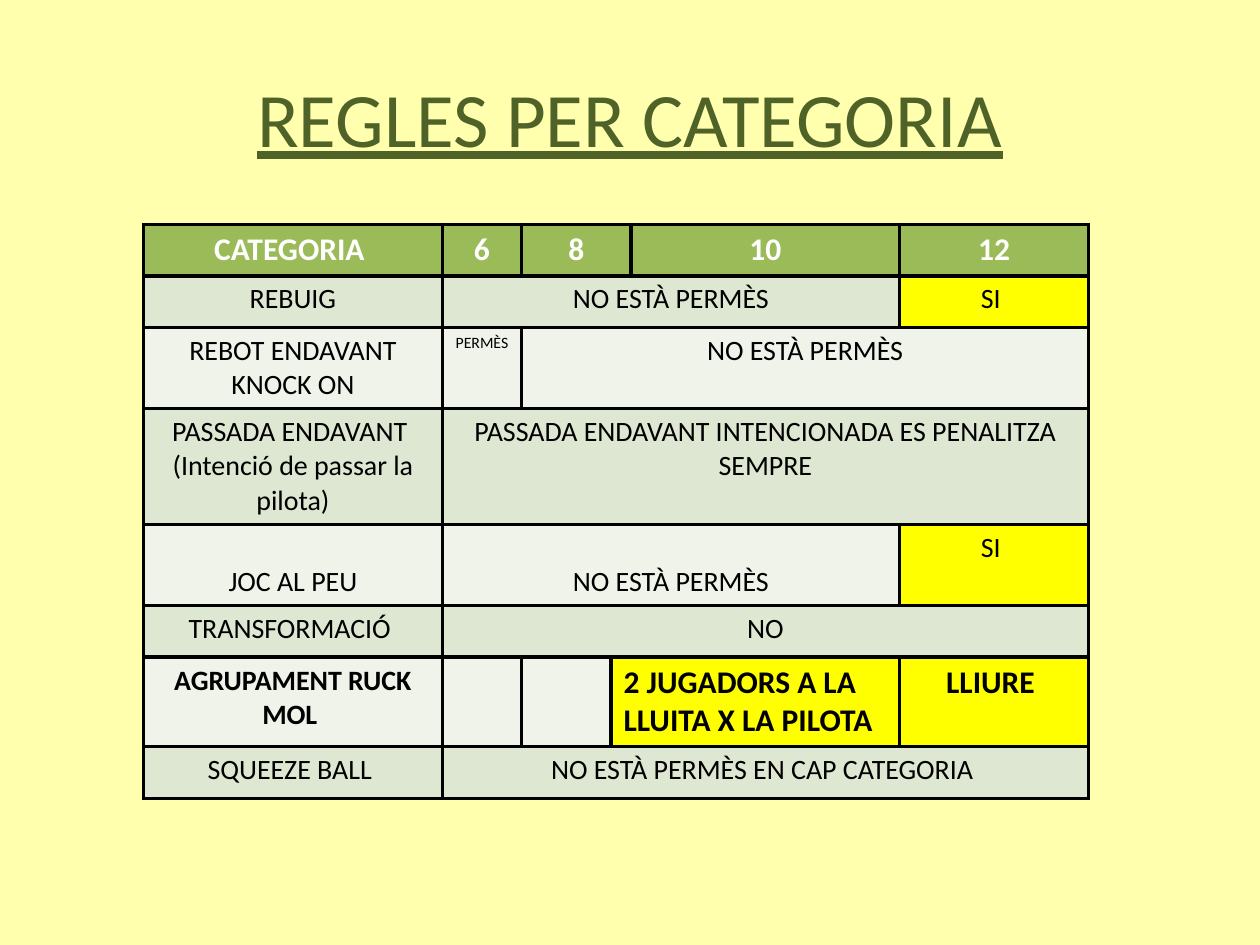
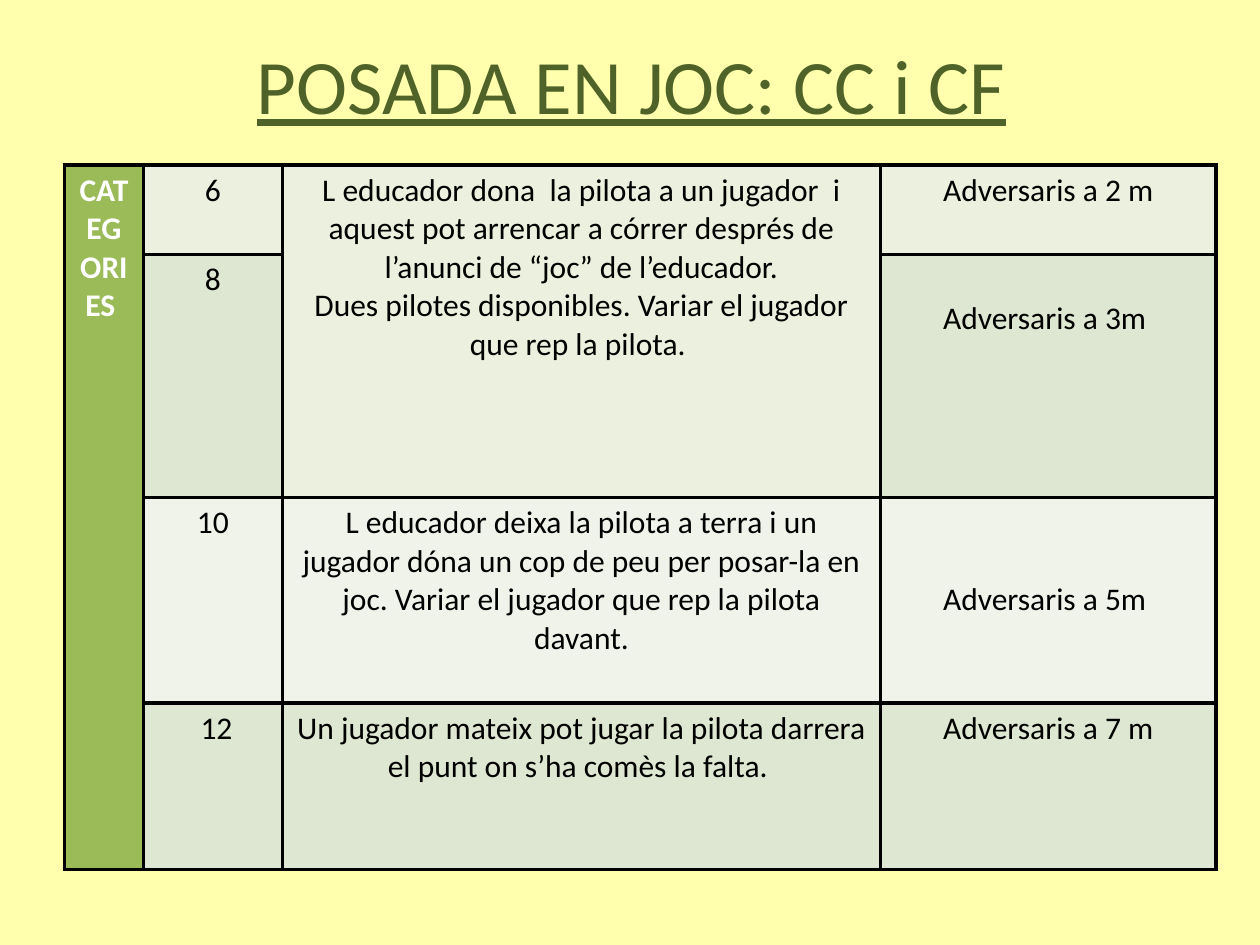
from dataclasses import dataclass

from lxml import etree
from pptx import Presentation
from pptx.dml.color import RGBColor
from pptx.enum import text as t
from pptx.oxml import ns
from pptx.util import Inches, Pt


@dataclass(frozen=True)
class Theme:
    font: str = "Calibri"
    background: str = "FFFFAD"
    title: str = "4F6228"
    header: str = "9BBB59"
    header_text: str = "FFFFFF"
    text: str = "000000"
    bands: tuple = ("EFF3EA", "DEE7D1")
    first_band: str = "EBF1DE"
    highlight: str = "FFFF00"
    border: str = "000000"
    border_width: float = 2.25
    title_size: int = 44
    large: int = 18
    normal: int = 16
    tiny: int = 9
    line_height: float = 1.22
    cell_margin: float = 0.05


THEME = Theme()


@dataclass
class Cell:
    text: str = ""
    columns: int = 1
    rows: int = 1
    fill: str = None
    size: int = None
    color: str = THEME.text
    bold: bool = False
    align: int = t.PP_ALIGN.CENTER
    lines_above: int = 0
    vertical: bool = False


def header(text, **options):
    return Cell(text, fill=THEME.header, color=THEME.header_text,
                bold=True, size=THEME.large, **options)


def highlight(text, **options):
    return Cell(text, fill=THEME.highlight, **options)


# Text and titles
def write_text(frame, content, *, size, color, bold=False, underline=False,
               align=t.PP_ALIGN.CENTER):
    """Write one paragraph for each line of the content."""
    for index, line in enumerate(content.split("\n")):
        paragraph = frame.add_paragraph() if index else frame.paragraphs[0]
        paragraph.alignment = align
        run = paragraph.add_run()
        run.text = line
        run.font.name = THEME.font
        run.font.size = Pt(size)
        run.font.bold = bold
        run.font.underline = underline
        run.font.color.rgb = RGBColor.from_string(color)


def add_titled_slide(presentation, title, left, top):
    slide = presentation.slides.add_slide(presentation.slide_layouts[5])
    shape = slide.shapes.title
    shape.left, shape.top = Inches(left), Inches(top)
    shape.width, shape.height = Inches(9), Inches(1.25)
    shape.text_frame.vertical_anchor = t.MSO_ANCHOR.MIDDLE
    write_text(shape.text_frame, title, size=THEME.title_size,
               color=THEME.title, underline=True)
    return slide


# Tables
def set_borders(cell):
    properties = cell._tc.get_or_add_tcPr()
    for side in ("lnL", "lnR", "lnT", "lnB"):
        line = etree.SubElement(properties, ns.qn(f"a:{side}"),
                                w=str(Pt(THEME.border_width)))
        fill = etree.SubElement(line, ns.qn("a:solidFill"))
        etree.SubElement(fill, ns.qn("a:srgbClr"), val=THEME.border)


def set_fill(cell, color):
    cell.fill.solid()
    cell.fill.fore_color.rgb = RGBColor.from_string(color)


def fill_cell(cell, content, size):
    size = content.size or size
    if content.fill:
        set_fill(cell, content.fill)
    if content.lines_above:
        offset = content.lines_above * size * THEME.line_height / 72
        cell.margin_top = Inches(THEME.cell_margin + offset)
    if content.vertical:
        cell._tc.get_or_add_tcPr().set("vert", "wordArtVert")
    if content.text:
        write_text(cell.text_frame, content.text, size=size, color=content.color,
                   bold=content.bold, align=content.align)


def add_grid(slide, left, top, widths, heights, rows, size):
    """Place each row's cells from left to right, past the merged ones."""
    table = slide.shapes.add_table(
        len(heights), len(widths), Inches(left), Inches(top),
        Inches(sum(widths)), Inches(sum(heights))).table
    table.first_row = table.horz_banding = False
    for column, width in zip(table.columns, widths):
        column.width = Inches(width)
    for index, height in enumerate(heights):
        table.rows[index].height = Inches(height)
        for cell in table.rows[index].cells:
            set_borders(cell)
            set_fill(cell, THEME.bands[index % 2])
    for row, contents in enumerate(rows):
        column = 0
        for content in contents:
            while table.cell(row, column).is_spanned:
                column += 1
            cell = table.cell(row, column)
            if content.columns > 1 or content.rows > 1:
                cell.merge(table.cell(row + content.rows - 1,
                                      column + content.columns - 1))
            fill_cell(cell, content, size)
            column += content.columns


# Slides
def add_category_rules(presentation):
    slide = add_titled_slide(presentation, "REGLES PER CATEGORIA", 0.5, 0.3)
    forbidden = "NO ESTÀ PERMÈS"
    rows = [
        [header("CATEGORIA "), header("6"), header("8", columns=2),
         header("10"), header("12")],
        [Cell("REBUIG"), Cell(forbidden, columns=4), highlight("SI ")],
        [Cell("REBOT ENDAVANT KNOCK ON"), Cell("PERMÈS", size=THEME.tiny),
         Cell(forbidden, columns=4)],
        [Cell("PASSADA ENDAVANT \n(Intenció de passar la pilota)"),
         Cell("PASSADA ENDAVANT INTENCIONADA ES PENALITZA SEMPRE", columns=5)],
        [Cell("JOC AL PEU", lines_above=1),
         Cell(forbidden, columns=4, lines_above=1), highlight("SI ")],
        [Cell("TRANSFORMACIÓ "), Cell("NO", columns=5)],
        [Cell("AGRUPAMENT RUCK MOL ", bold=True), Cell(), Cell(),
         highlight("2 JUGADORS A LA LLUITA X LA PILOTA", columns=2, bold=True,
                   size=THEME.large, align=t.PP_ALIGN.LEFT),
         highlight("LLIURE ", bold=True, size=THEME.large)],
        [Cell("SQUEEZE BALL "),
         Cell("NO ESTÀ PERMÈS EN CAP CATEGORIA ", columns=5)],
    ]
    add_grid(slide, 1.14, 1.78, [2.37, 0.63, 0.71, 0.16, 2.13, 1.5],
             [0.41, 0.41, 0.64, 0.92, 0.64, 0.41, 0.7, 0.41], rows, THEME.normal)


def add_restart_rules(presentation):
    slide = add_titled_slide(presentation, "POSADA EN JOC: CC i CF", 0.51, 0.04)
    first = THEME.first_band
    rows = [
        [header("CATEGORIES ", rows=4, vertical=True), Cell("6", fill=first),
         Cell("L educador dona  la pilota a un jugador  i aquest pot arrencar "
              "a córrer després de l’anunci de “joc” de l’educador.\n"
              "Dues pilotes disponibles. Variar el jugador que rep la pilota. ",
              rows=2, fill=first),
         Cell("Adversaris a 2 m", fill=first)],
        [Cell("8"), Cell("Adversaris a 3m ", lines_above=1)],
        [Cell("10"),
         Cell("L educador deixa la pilota a terra i un jugador dóna un cop de "
              "peu per posar-la en joc. Variar el jugador que rep la pilota "
              "davant."),
         Cell("Adversaris a 5m ", lines_above=2)],
        [Cell(" 12"),
         Cell("Un jugador mateix pot jugar la pilota darrera el punt on s’ha "
              "comès la falta. "),
         Cell("Adversaris a 7 m")],
    ]
    add_grid(slide, 0.51, 1.31, [0.63, 1.1, 4.75, 2.66],
             [0.71, 1.93, 1.63, 1.32], rows, THEME.large)


def main():
    presentation = Presentation()
    presentation.slide_width, presentation.slide_height = Inches(10), Inches(7.5)
    background = presentation.slide_master.background.fill
    background.solid()
    background.fore_color.rgb = RGBColor.from_string(THEME.background)
    add_category_rules(presentation)
    add_restart_rules(presentation)
    presentation.save("out.pptx")


if __name__ == "__main__":
    main()
